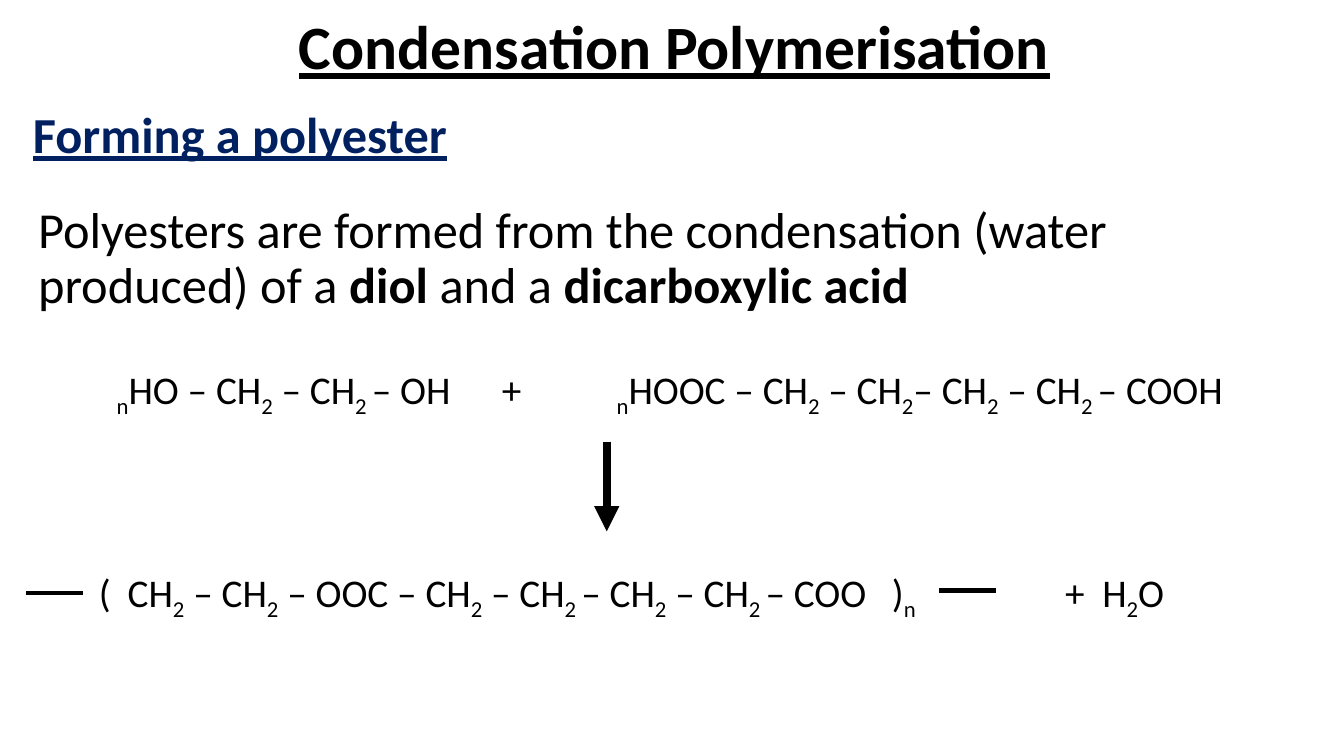
from lxml import etree
from pptx import Presentation
from pptx.dml.color import RGBColor
from pptx.enum.shapes import MSO_CONNECTOR, MSO_SHAPE
from pptx.enum.text import MSO_ANCHOR as ANCHOR, PP_ALIGN as ALIGN
from pptx.oxml.ns import qn
from pptx.util import Cm, Pt

FONT = "Calibri"
BLACK, NAVY, WHITE = "000000", "002060", "FFFFFF"
FORMULA_H = 1.45


def rgb(value):
    return RGBColor.from_string(value)


def add_run(p, text, size, color=BLACK, bold=False, underline=False):
    r = p.add_run()
    r.text = text
    r.font.name, r.font.size = FONT, Pt(size)
    r.font.color.rgb = rgb(color)
    r.font.bold, r.font.underline = bold, underline
    return r


def add_textbox(s, x, y, w, h, wrap=True):
    tf = s.shapes.add_textbox(Cm(x), Cm(y), Cm(w), Cm(h)).text_frame
    tf.word_wrap = wrap
    return tf


def add_line(s, x1, y1, x2, y2, width, arrow=False):
    line = s.shapes.add_connector(MSO_CONNECTOR.STRAIGHT, Cm(x1), Cm(y1), Cm(x2), Cm(y2))
    line.line.color.rgb = rgb(BLACK)
    line.line.width = Pt(width)
    if arrow:
        etree.SubElement(line.line._get_or_add_ln(), qn("a:tailEnd"), type="triangle")
    etree.SubElement(line._element.spPr, qn("a:effectLst"))


def add_formula(s, x, y, w, marked):
    """Write a formula in which every second part between bars is a subscript."""
    p = add_textbox(s, x, y, w, FORMULA_H, wrap=False).paragraphs[0]
    for i, part in enumerate(marked.split("|")):
        if part:
            r = add_run(p, part, 28)
            if i % 2:
                r.font._element.set("baseline", "-25000")


def add_title(s, x, y, w, h):
    sp = s.shapes.add_shape(MSO_SHAPE.RECTANGLE, Cm(x), Cm(y), Cm(w), Cm(h))
    sp.shadow.inherit = False
    sp.fill.solid()
    sp.fill.fore_color.rgb = rgb(WHITE)
    sp.line.fill.background()
    tf = sp.text_frame
    tf.vertical_anchor = ANCHOR.MIDDLE
    p = tf.paragraphs[0]
    p.alignment, p.line_spacing = ALIGN.CENTER, 0.9
    add_run(p, "Condensation Polymerisation", 44, bold=True, underline=True)


def add_prose(s, x, y, w, h, parts):
    """Write one large paragraph from (text, font options) parts."""
    p = add_textbox(s, x, y, w, h).paragraphs[0]
    p.line_spacing, p.space_before = 0.9, Pt(10)
    for text, options in parts:
        add_run(p, text, 36, **options)


def add_reactants(s, x, y):
    add_formula(s, x, y, 9.5, "|n|HO – CH|2| – CH|2 |– OH")
    add_formula(s, x + 9.71, y, 1.2, "+")
    add_formula(s, x + 12.6, y, 16.23,
                "|n|HOOC – CH|2| – CH|2|– CH|2| – CH|2 |– COOH")


def add_products(s, x, y):
    add_line(s, x, y + 0.74, x + 1.42, y + 0.74, 3)
    add_formula(s, x + 1.58, y, 0.9, "(")
    add_formula(s, x + 2.31, y, 19.2,
                "CH|2| – CH|2| – OOC – CH|2| – CH|2 |– CH|2| – CH|2 |– COO")
    add_formula(s, x + 21.57, y, 1.2, ")|n|")
    add_line(s, x + 23.01, y + 0.68, x + 24.43, y + 0.68, 3)
    add_formula(s, x + 25.93, y, 1, "+")
    add_formula(s, x + 26.87, y, 2.2, "H|2|O")


def main():
    prs = Presentation()
    prs.slide_width, prs.slide_height = Cm(33.87), Cm(19.05)
    s = prs.slides.add_slide(prs.slide_layouts[6])
    add_title(s, 0.3, 0.2, 33.4, 2.11)
    add_prose(s, 0.58, 2.64, 32.69, 1.88, [
        ("Forming a polyester", {"color": NAVY, "bold": True, "underline": True}),
    ])
    add_prose(s, 0.71, 5.05, 32.33, 3.5, [
        ("Polyesters are formed from the condensation (water produced) of a ", {}),
        ("diol", {"bold": True}),
        (" and a ", {}),
        ("dicarboxylic acid", {"bold": True}),
    ])
    add_reactants(s, 2.69, 9.09)
    add_line(s, 15.29, 11.13, 15.29, 13.39, 6, arrow=True)
    add_products(s, 0.66, 14.2)
    prs.save("out.pptx")


if __name__ == "__main__":
    main()
